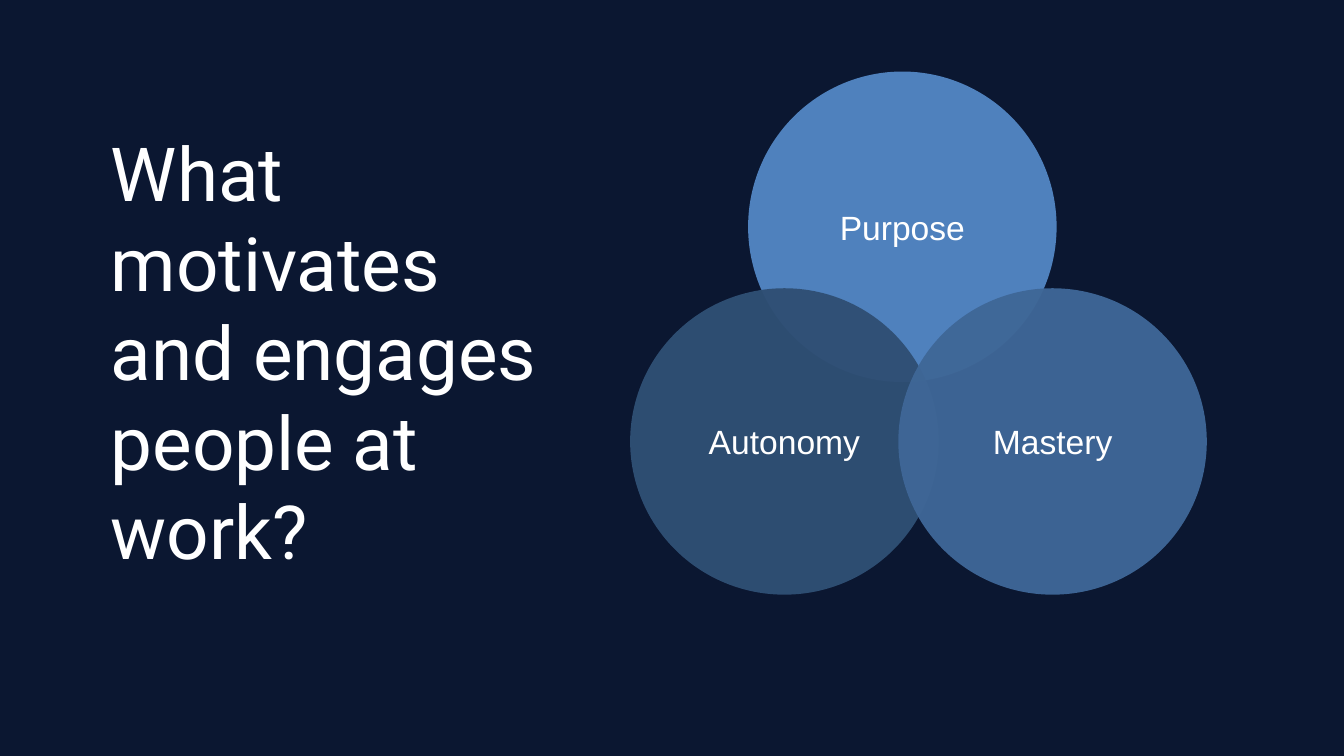
from lxml import etree
from pptx import Presentation
from pptx.dml.color import RGBColor
from pptx.enum.shapes import MSO_SHAPE
from pptx.enum.text import MSO_ANCHOR, PP_ALIGN
from pptx.oxml.ns import qn
from pptx.util import Inches, Pt

OVAL = MSO_SHAPE.OVAL
TOP, MIDDLE = MSO_ANCHOR.TOP, MSO_ANCHOR.MIDDLE
LEFT, CENTER = PP_ALIGN.LEFT, PP_ALIGN.CENTER

COLORS = {
    "navy": "0B1731",
    "white": "FFFFFF",
    "purpose": "4F81BD",
    "autonomy": "2F4F74",
    "mastery": "3F6797",
}
TITLE_FONT = {"name": "Roboto", "size": Pt(53.3)}
LABEL_FONT = {"name": "Arial", "size": Pt(24)}
MARGINS = {
    "margin_left": Inches(0.07),
    "margin_right": Inches(0.07),
    "margin_top": Inches(0.05),
    "margin_bottom": Inches(0.05),
}
LABEL_W, LABEL_H = 2.17, 0.5


def rgb(name):
    return RGBColor.from_string(COLORS[name])


def set_attrs(obj, values):
    for key, value in values.items():
        setattr(obj, key, value)


def add_text(shapes, box, text, font, align, anchor):
    tf = shapes.add_textbox(*map(Inches, box)).text_frame
    set_attrs(tf, {**MARGINS, "word_wrap": True, "vertical_anchor": anchor})
    p = tf.paragraphs[0]
    p.alignment = align
    r = p.add_run()
    r.text = text
    set_attrs(r.font, font)
    r.font.color.rgb = rgb("white")


def add_circle(s, box, text, color, opacity):
    x, y, w, h = box
    group = s.shapes.add_group_shape()
    sp = group.shapes.add_shape(OVAL, *map(Inches, box))
    sp.shadow.inherit = False
    sp.line.fill.background()
    sp.fill.solid()
    sp.fill.fore_color.rgb = rgb(color)
    if opacity < 100:
        clr = sp.fill._xPr.find(qn("a:solidFill"))[0]
        etree.SubElement(clr, qn("a:alpha")).set("val", str(opacity * 1000))
    label_box = (x + (w - LABEL_W) / 2, y + (h - LABEL_H) / 2, LABEL_W, LABEL_H)
    add_text(group.shapes, label_box, text, LABEL_FONT, CENTER, MIDDLE)


def add_venn(s, box):
    x, y, w, h = box
    d, lower_h = 3.06, 3.04
    lower_y = y + h - lower_h
    add_circle(s, (x + 1.17, y, d, 3.08), "Purpose", "purpose", 100)
    add_circle(s, (x, lower_y, d, lower_h), "Autonomy", "autonomy", 97)
    add_circle(s, (x + w - d, lower_y, d, lower_h), "Mastery", "mastery", 96)


def add_question(s, box):
    text = "What motivates and engages people at work?"
    add_text(s.shapes, box, text, TITLE_FONT, LEFT, TOP)


def main():
    prs = Presentation()
    prs.slide_width, prs.slide_height = Inches(13.33), Inches(7.5)
    s = prs.slides.add_slide(prs.slide_layouts[6])
    s.background.fill.solid()
    s.background.fill.fore_color.rgb = rgb("navy")
    add_question(s, (1.03, 1.21, 4.59, 4.59))
    add_venn(s, (6.25, 0.71, 5.72, 5.19))
    prs.save("out.pptx")


if __name__ == "__main__":
    main()
